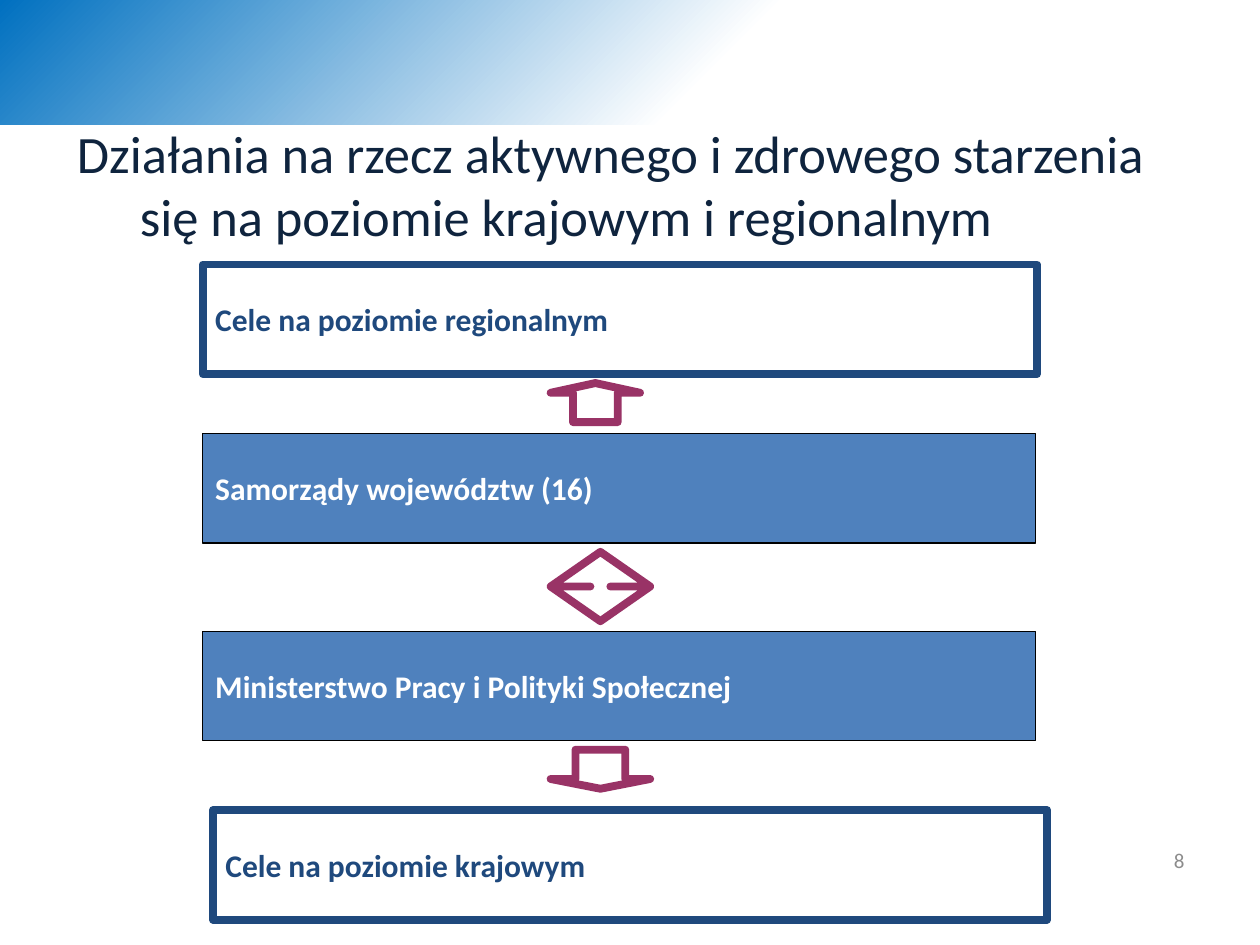
import pptx
import pptx.dml.color
import pptx.enum.shapes
import pptx.enum.text
import pptx.oxml
import pptx.oxml.ns
import pptx.util

Inches = pptx.util.Inches
Pt = pptx.util.Pt
Kind = pptx.enum.shapes.MSO_SHAPE
Align = pptx.enum.text.PP_ALIGN
Anchor = pptx.enum.text.MSO_ANCHOR
NAVY = "1F497D"
LEFT = 1.61
MID = 4.37


def color(code):
    return pptx.dml.color.RGBColor.from_string(code)


def write(shape, text, size, code, bold=False, align=Align.LEFT):
    frame = shape.text_frame
    frame.text = text
    frame.word_wrap = True
    frame.vertical_anchor = Anchor.MIDDLE
    para = frame.paragraphs[0]
    para.alignment = align
    font = para.runs[0].font
    font.name = "Calibri"
    font.size = Pt(size)
    font.bold = bold
    font.color.rgb = color(code)
    return para


def add_shape(slide, kind, place, fill, line, width):
    shape = slide.shapes.add_shape(kind, *map(Inches, place))
    shape.shadow.inherit = False
    if fill:
        shape.fill.solid()
        shape.fill.fore_color.rgb = color(fill)
    else:
        shape.fill.background()
    if line:
        shape.line.color.rgb = color(line)
        shape.line.width = Pt(width)
    else:
        shape.line.fill.background()
    return shape


def add_band(slide):
    band = add_shape(slide, Kind.RECTANGLE, (0, 0, 6.34, 0.99), None, None, 0)
    props = band._element.spPr
    grad = pptx.oxml.parse_xml(
        f'<a:gradFill {pptx.oxml.ns.nsdecls("a")} rotWithShape="1"><a:gsLst>'
        '<a:gs pos="15000"><a:srgbClr val="FFFFFF"/></a:gs>'
        '<a:gs pos="100000"><a:srgbClr val="0070C0"/></a:gs></a:gsLst>'
        '<a:path path="circle"><a:fillToRect l="100000" t="100000"/></a:path>'
        '</a:gradFill>')
    props.replace(props.find(pptx.oxml.ns.qn("a:noFill")), grad)


def add_title(slide, text):
    title = slide.shapes.title
    title.left, title.top, title.width, title.height = map(
        Inches, (0.51, 0.99, 9, 0.94))
    para = write(title, text, 30, "0F243E")
    props = para._p.get_or_add_pPr()
    props.set("marL", str(Inches(0.5)))
    props.set("indent", str(Inches(-0.5)))


def add_goal(slide, left, top, text):
    box = add_shape(slide, Kind.RECTANGLE, (left, top, 6.62, 0.87),
                    None, NAVY, 4.5)
    write(box, text, 18, NAVY, True)


def add_body(slide, top, text):
    box = add_shape(slide, Kind.RECTANGLE, (LEFT, top, 6.61, 0.87),
                    "4F81BD", "000000", 0.75)
    write(box, text, 18, "FFFFFF", True)


def add_arrow(slide, kind, top, width, height, head):
    arrow = add_shape(slide, kind, (MID, top, width, height),
                      None, "993366", 4.5)
    arrow.adjustments[0] = 0.5
    arrow.adjustments[1] = head


def add_number(slide, text):
    box = slide.shapes.add_textbox(*map(Inches, (7.68, 6.63, 1.82, 0.4)))
    write(box, text, 12, "8C8C8C", align=Align.RIGHT)


def main():
    deck = pptx.Presentation()
    deck.slide_width = Inches(10)
    deck.slide_height = Inches(7.5)
    slide = deck.slides.add_slide(deck.slide_layouts[5])
    add_band(slide)
    add_title(slide, "Działania na rzecz aktywnego i zdrowego starzenia "
                     "się na poziomie krajowym i regionalnym")
    add_number(slide, "8")
    add_goal(slide, 1.69, 6.43, "Cele na poziomie krajowym")
    add_arrow(slide, Kind.UP_DOWN_ARROW, 4.38, 0.79, 0.55, 0.2)
    add_body(slide, 5.01, "Ministerstwo Pracy i Polityki Społecznej")
    add_body(slide, 3.44, "Samorządy województw (16)")
    add_goal(slide, LEFT, 2.1, "Cele na poziomie regionalnym")
    add_arrow(slide, Kind.UP_ARROW, 3.04, 0.71, 0.31, 0.25)
    add_arrow(slide, Kind.DOWN_ARROW, 5.95, 0.79, 0.31, 0.25)
    deck.save("out.pptx")


if __name__ == "__main__":
    main()
